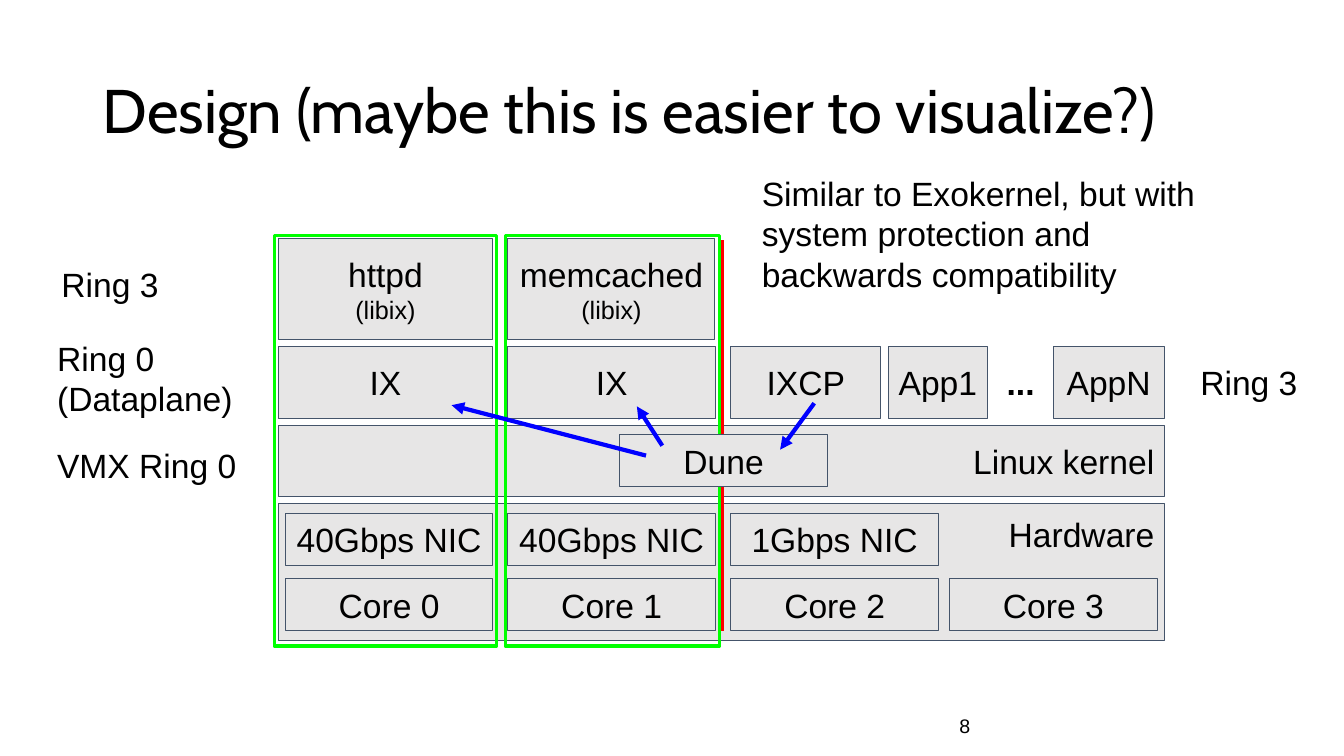
from lxml import etree
from pptx import Presentation
from pptx import util as u
from pptx.dml.color import RGBColor
from pptx.enum import shapes, text
from pptx.oxml.ns import qn

# Content
TITLE = "Design (maybe this is easier to visualize?)"
COLORS = {"text": "000000", "box": "E7E6E6", "border": "44546A",
          "dataplane": "00FF00", "divider": "FF0000", "arrow": "0000FF"}

# Layout in cm: columns of the stack and rows as (top, height)
COLS = [7.19, 12.8, 18.42, 23.93]
STACK_LEFT, STACK_RIGHT = 7.01, 29.34
UNIT_W = 5.23
ROWS = {"app": (6.02, 2.54), "dataplane": (8.74, 1.8), "kernel": (10.72, 1.8),
        "hardware": (12.7, 3.45), "dune": (10.95, 1.32), "nic": (12.93, 1.32),
        "core": (14.58, 1.32)}
NICS = ["40Gbps NIC", "40Gbps NIC", "1Gbps NIC"]
CORES = ["Core 0", "Core 1", "Core 2", "Core 3"]

# Row, left, width, lines
LAYERS = [("kernel", "Linux kernel"), ("hardware", "Hardware")]
BOXES = [
    ("app", STACK_LEFT, 5.41, ["httpd", "(libix)"]),
    ("app", COLS[1], 5.22, ["memcached", "(libix)"]),
    ("dataplane", STACK_LEFT, 5.41, ["IX"]),
    ("dataplane", COLS[1], UNIT_W, ["IX"]),
    ("dataplane", COLS[2], 3.78, ["IXCP"]),
    ("dataplane", 22.38, 2.51, ["App1"]),
    ("dataplane", 26.54, 2.8, ["AppN"]),
]
BOXES += [("nic", x, UNIT_W, [name]) for x, name in zip(COLS, NICS)]
BOXES += [("core", x, UNIT_W, [name]) for x, name in zip(COLS, CORES)]
BOXES.append(("dune", 15.62, UNIT_W, ["Dune"]))

DATAPLANES = [(12.73, 5.41), (6.91, 5.61)]  # left, width
DATAPLANE_ROW = (5.94, 10.34)

# Left, top, width, height, lines, size, bold
LABELS = [
    (1.3, 6.4, 5.03, 1.32, ["Ring 3"], 24, False),
    (1.19, 8.26, 5.7, 2.5, ["Ring 0", "(Dataplane)"], 24, False),
    (1.19, 10.95, 5.23, 1.32, ["VMX Ring 0"], 24, False),
    (30.0, 8.86, 3.23, 1.32, ["Ring 3"], 24, False),
    (25.12, 8.86, 1.57, 1.32, ["..."], 24, True),
    (18.95, 4.11, 11.61, 3.5,
     ["Similar to Exokernel, but with system protection and backwards compatibility"],
     24, False),
    (23.93, 17.84, 7.62, 0.9, ["8"], 14, False),
]

# Start and end points
DIVIDER = ((18.21, 6.05), (18.21, 15.9))
ARROWS = [
    ((20.52, 10.16), (19.66, 11.33)),
    ((16.69, 11.23), (16.05, 10.24)),
    ((16.28, 11.48), (11.38, 10.21)),
]

prs = Presentation()
prs.slide_width, prs.slide_height = u.Cm(33.87), u.Cm(19.05)
slide = prs.slides.add_slide(prs.slide_layouts[5])


def rgb(name):
    return RGBColor.from_string(COLORS[name])


def write(sp, lines, sizes, align="LEFT", anchor="MIDDLE", font="Arial", bold=False):
    tf = sp.text_frame
    tf.text = "\n".join(lines)
    tf.word_wrap = True
    tf.auto_size = text.MSO_AUTO_SIZE.NONE
    tf.vertical_anchor = text.MSO_ANCHOR[anchor]
    tf.margin_left = tf.margin_right = tf.margin_top = tf.margin_bottom = u.Cm(0.25)
    for p, size in zip(tf.paragraphs, sizes):
        p.alignment = text.PP_ALIGN[align]
        for r in p.runs:
            r.font.name, r.font.size, r.font.bold = font, u.Pt(size), bold
            r.font.color.rgb = rgb("text")


def add_rect(left, top, width, height, line, weight, fill=None):
    sp = slide.shapes.add_shape(shapes.MSO_SHAPE.RECTANGLE,
                                *map(u.Cm, (left, top, width, height)))
    sp.shadow.inherit = False
    if fill:
        sp.fill.solid()
        sp.fill.fore_color.rgb = rgb(fill)
    else:
        sp.fill.background()
    sp.line.color.rgb, sp.line.width = rgb(line), u.Pt(weight)
    return sp


def add_line(start, end, color, weight, arrow=False):
    line = slide.shapes.add_connector(shapes.MSO_CONNECTOR.STRAIGHT,
                                      *map(u.Cm, start + end))
    line.line.color.rgb, line.line.width = rgb(color), u.Pt(weight)
    if arrow:
        etree.SubElement(line.line._get_or_add_ln(), qn("a:tailEnd"), type="triangle")
    etree.SubElement(line._element.spPr, qn("a:effectLst"))


# Title
title = slide.shapes.title
title.left, title.top, title.width, title.height = map(u.Cm, (2.34, 1.02, 29.21, 3.68))
write(title, [TITLE], [44], font="Cabin")
title.text_frame.paragraphs[0].line_spacing = 0.9

# Wide layers, dataplane outlines and divider
for row, name in LAYERS:
    top, height = ROWS[row]
    sp = add_rect(STACK_LEFT, top, STACK_RIGHT - STACK_LEFT, height, "border", 0.75, "box")
    write(sp, [name], [24], "RIGHT", "TOP" if row == "hardware" else "MIDDLE")
for left, width in DATAPLANES:
    add_rect(left, DATAPLANE_ROW[0], width, DATAPLANE_ROW[1], "dataplane", 2.25)
add_line(*DIVIDER, "divider", 2.25)

# Components
for row, left, width, lines in BOXES:
    top, height = ROWS[row]
    sp = add_rect(left, top, width, height, "border", 0.75, "box")
    write(sp, lines, [24, 18], "CENTER")

# Arrows
for start, end in ARROWS:
    add_line(start, end, "arrow", 3, arrow=True)

# Labels and page number
for left, top, width, height, lines, size, bold in LABELS:
    sp = slide.shapes.add_textbox(*map(u.Cm, (left, top, width, height)))
    anchor = "MIDDLE" if size == 14 else "TOP"
    write(sp, lines, [size] * len(lines), anchor=anchor, bold=bold)

prs.save("out.pptx")
